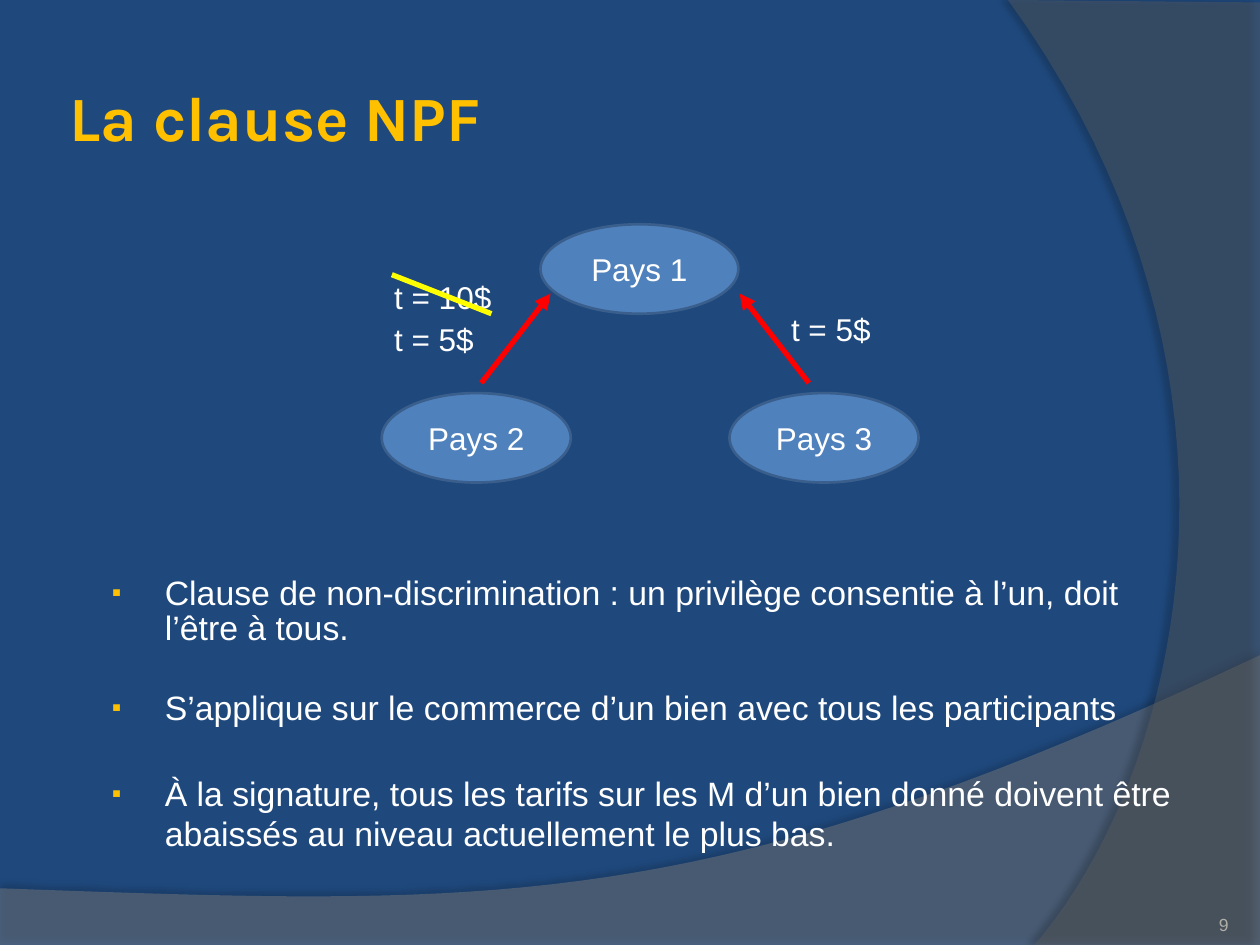
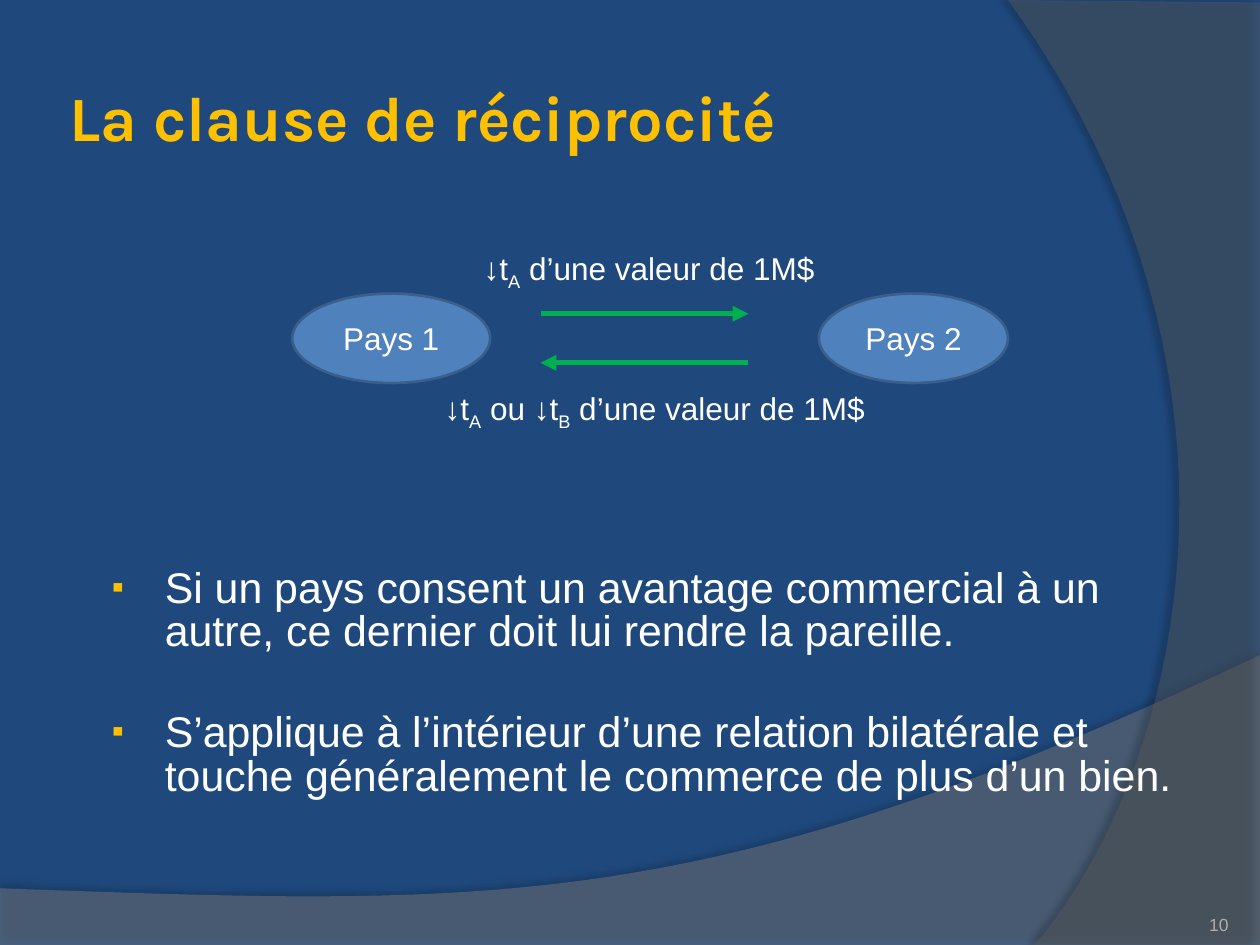
"""Build two slides on trade clauses: most favoured nation and reciprocity."""
from lxml.etree import SubElement
from pptx import Presentation
from pptx.dml.color import RGBColor
from pptx.enum.shapes import MSO_CONNECTOR, MSO_SHAPE
from pptx.enum.text import MSO_ANCHOR, MSO_AUTO_SIZE, PP_ALIGN
from pptx.oxml.ns import qn
from pptx.util import Inches, Pt

NAVY = RGBColor(0x1F, 0x49, 0x7D)
GOLD = RGBColor(0xFF, 0xC0, 0x00)
WHITE = RGBColor(0xFF, 0xFF, 0xFF)
STONE = RGBColor(0xB0, 0xAF, 0xA6)
BLUE = RGBColor(0x4F, 0x81, 0xBD)
BLUE_EDGE = RGBColor(0x3A, 0x5F, 0x8C)
RED = RGBColor(0xFF, 0x00, 0x00)
YELLOW = RGBColor(0xFF, 0xFF, 0x00)
GREEN = RGBColor(0x00, 0xB0, 0x50)
BAND_GRAY = RGBColor(0x7F, 0x7F, 0x7F)
SIDE_GRAY = RGBColor(0x5E, 0x5E, 0x5E)

TITLE = {"name": "Karla", "size": Pt(36), "bold": True, "color": GOLD}
LABEL = {"name": "Arial", "size": Pt(18), "color": WHITE}
NUMBER = {"name": "Arial", "size": Pt(10), "color": STONE}

BANDS = [
    {"before": [(0, 7.05), (0, 7.51), (10, 7.51)],
     "curve": [(10, 5.2), (5.59, 7.29), (3.91, 7.19), (0, 7.05)],
     "color": BAND_GRAY, "alpha": 45, "shadow": (35, 4, 3.5, 270)},
    {"before": [(10, 0.02), (10, 7.5)],
     "curve": [(8.21, 7.5), (9.35, 6.19), (10.18, 3), (8, 0)],
     "color": SIDE_GRAY, "alpha": 40, "shadow": (45, 4, 4, 180)},
]

PAGES = [
    {"title": "La clause NPF", "number": "9",
     "countries": [("Pays 1", 4.29, 1.78, 1.57), ("Pays 2", 3.03, 3.12, 1.5),
                   ("Pays 3", 5.79, 3.12, 1.5)],
     "labels": [(["t = 10$"], 3.03, 2.16, 0.98), (["t = 5$"], 3.03, 2.49, 0.84),
                (["t = 5$"], 6.18, 2.41, 0.84)],
     "lines": [((6.42, 3.04), (5.87, 2.33), RED, True),
               ((3.82, 3.04), (4.37, 2.33), RED, True),
               ((3.11, 2.18), (3.9, 2.49), YELLOW, False)],
     "body_top": 4.54, "body_size": 19.3, "gap": 26,
     "points": [
         ("Clause de non-discrimination : un privilège consentie à l’un, doit l’être à tous.", 0.85),
         ("S’applique sur le commerce d’un bien avec tous les participants", 0.85),
         ("À la signature, tous les tarifs sur les M d’un bien donné doivent être "
          "abaissés au niveau actuellement le plus bas.", 1.0)]},
    {"title": "La clause de réciprocité", "number": "10",
     "countries": [("Pays 1", 2.32, 2.33, 1.57), ("Pays 2", 6.5, 2.33, 1.5)],
     "labels": [(["↓t", "A", " d’une valeur de 1M$"], 3.74, 1.93, 2.88),
                (["↓t", "A", " ou ↓t", "B", " d’une valeur de 1M$"], 3.43, 3.04, 3.68)],
     "lines": [((4.29, 2.49), (5.94, 2.49), GREEN, True),
               ((5.94, 2.88), (4.29, 2.88), GREEN, True)],
     "body_top": 4.46, "body_size": 24.5, "gap": 32.5,
     "points": [
         ("Si un pays consent un avantage commercial à un autre, ce dernier doit "
          "lui rendre la pareille.", 0.85),
         ("S’applique à l’intérieur d’une relation bilatérale et touche "
          "généralement le commerce de plus d’un bien.", 0.85)]},
]


def add_span(para, text, style):
    """Add a run to a paragraph and apply a dict of font values."""
    span = para.add_run()
    span.text = text
    for key, value in style.items():
        if key == "color":
            span.font.color.rgb = value
        else:
            setattr(span.font, key, value)
    return span


def add_box(page, place, frame_format):
    """Add a text box and apply a dict of text frame values."""
    box = page.shapes.add_textbox(*map(Inches, place))
    for key, value in frame_format.items():
        setattr(box.text_frame, key, value)
    return box.text_frame


deck = Presentation()
deck.slide_width, deck.slide_height = Inches(10), Inches(7.5)
margins = ("margin_left", "margin_top", "margin_right", "margin_bottom")
title_frame = {"word_wrap": True, "vertical_anchor": MSO_ANCHOR.MIDDLE,
               **dict.fromkeys(margins, Inches(0.05))}
number_frame = {"word_wrap": True, "vertical_anchor": MSO_ANCHOR.BOTTOM,
                **dict.fromkeys(margins, 0)}
label_frame = {"word_wrap": False, "auto_size": MSO_AUTO_SIZE.SHAPE_TO_FIT_TEXT}

for content in PAGES:
    page = deck.slides.add_slide(deck.slide_layouts[6])
    page.background.fill.solid()
    page.background.fill.fore_color.rgb = NAVY

    for band in BANDS:
        outline = list(band["before"])
        for step in range(41):
            t = step / 40
            weights = ((1 - t) ** 3, 3 * t * (1 - t) ** 2, 3 * t ** 2 * (1 - t), t ** 3)
            outline.append(tuple(sum(weight * point[axis] for weight, point
                                     in zip(weights, band["curve"])) for axis in (0, 1)))
        corners = [(Inches(x), Inches(y)) for x, y in outline]
        builder = page.shapes.build_freeform(*corners[0])
        builder.add_line_segments(corners[1:], close=True)
        shape = builder.convert_to_shape()
        shape.line.fill.background()
        shape.fill.solid()
        shape.fill.fore_color.rgb = band["color"]
        properties = shape.element.spPr
        color = properties.find(qn("a:solidFill"))[0]
        SubElement(color, qn("a:alpha"), val=str(band["alpha"] * 1000))
        alpha, blur, distance, angle = band["shadow"]
        effects = SubElement(properties, qn("a:effectLst"))
        shadow = SubElement(effects, qn("a:outerShdw"), blurRad=str(Pt(blur)),
                            dist=str(Pt(distance)), dir=str(angle * 60000),
                            algn="ctr", rotWithShape="0")
        shade = SubElement(shadow, qn("a:srgbClr"), val="000000")
        SubElement(shade, qn("a:alpha"), val=str(alpha * 1000))

    title = add_box(page, (0.5, 0.3, 9.5, 1.25), title_frame)
    add_span(title.paragraphs[0], content["title"], TITLE)
    number = add_box(page, (8.92, 7.02, 0.83, 0.4), number_frame)
    number.paragraphs[0].alignment = PP_ALIGN.RIGHT
    add_span(number.paragraphs[0], content["number"], NUMBER)

    for name, left, top, width in content["countries"]:
        country = page.shapes.add_shape(MSO_SHAPE.OVAL, *map(Inches, (left, top, width, 0.71)))
        country.shadow.inherit = False
        country.fill.solid()
        country.fill.fore_color.rgb = BLUE
        country.line.color.rgb = BLUE_EDGE
        country.line.width = Pt(1.5)
        country.text_frame.vertical_anchor = MSO_ANCHOR.MIDDLE
        para = country.text_frame.paragraphs[0]
        para.alignment = PP_ALIGN.CENTER
        add_span(para, name, LABEL)

    for pieces, left, top, width in content["labels"]:
        label = add_box(page, (left, top, width, 0.4), label_frame)
        for piece in pieces:
            span = add_span(label.paragraphs[0], piece, LABEL)
            if piece in ("A", "B"):
                span.font._element.set("baseline", "-25000")

    for start, end, color, has_head in content["lines"]:
        line = page.shapes.add_connector(MSO_CONNECTOR.STRAIGHT, *map(Inches, start + end))
        line.line.color.rgb = color
        line.line.width = Pt(3)
        if has_head:
            SubElement(line.line._get_or_add_ln(), qn("a:tailEnd"), type="triangle")
        SubElement(line.element.spPr, qn("a:effectLst"))

    body = add_box(page, (0.75, content["body_top"], 8.72, 2.33), {"word_wrap": True})
    body_style = {**LABEL, "size": Pt(content["body_size"])}
    for index, (text, spacing) in enumerate(content["points"]):
        para = body.add_paragraph() if index else body.paragraphs[0]
        para.line_spacing = spacing
        para.space_before = Pt(content["gap"] if index else 1)
        add_span(para, text, body_style)
        settings = para._p.get_or_add_pPr()
        settings.set("marL", str(Inches(0.46)))
        settings.set("indent", str(Inches(-0.42)))
        bullet_color = SubElement(settings, qn("a:buClr"))
        SubElement(bullet_color, qn("a:srgbClr"), val=str(GOLD))
        SubElement(settings, qn("a:buSzPct"), val="80000")
        SubElement(settings, qn("a:buFont"), typeface="Arial")
        SubElement(settings, qn("a:buChar"), char="▪")

deck.save("out.pptx")
